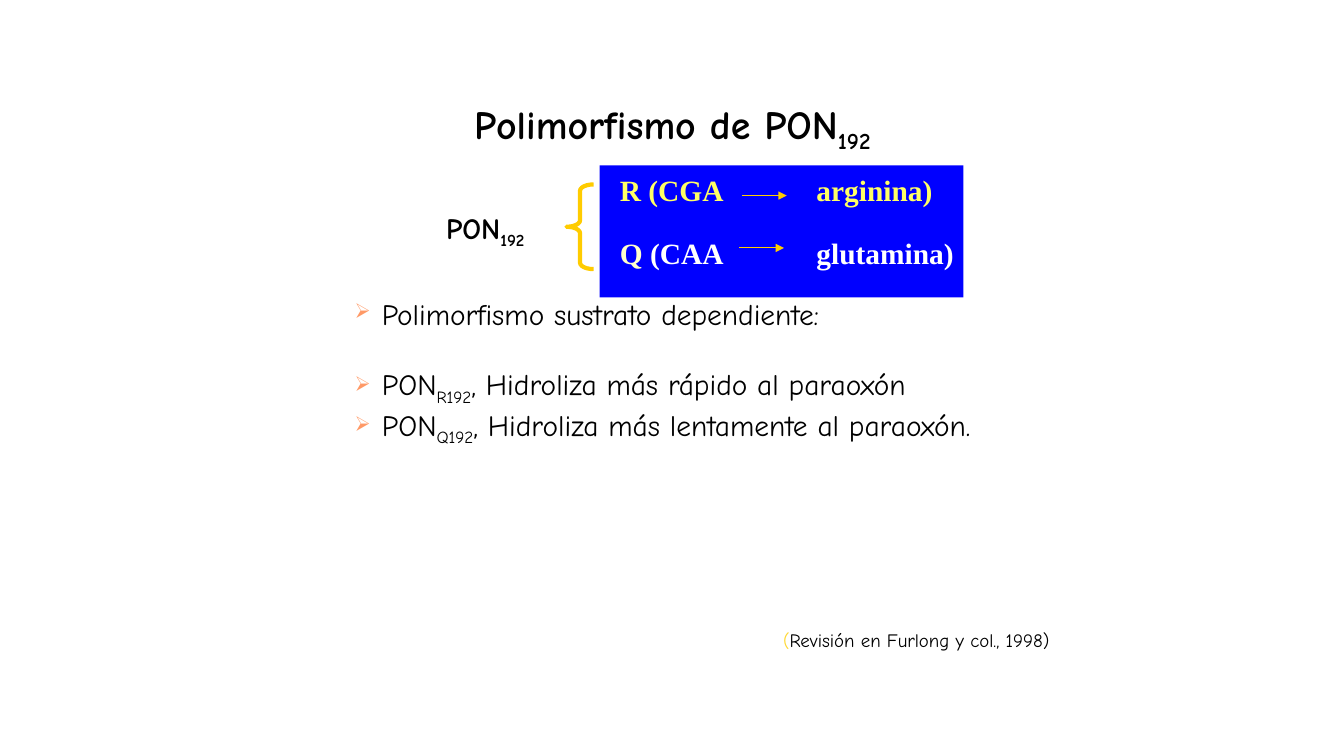
from lxml import etree
from pptx import Presentation, util as u
from pptx.dml.color import RGBColor
from pptx.enum import shapes, text
from pptx.oxml import ns

COLOURS = {"ink": "000000", "panel": "0000FF", "gold": "FFCC00", "yellow": "FFFF66",
           "cream": "FFFFCC", "white": "FFFFFF", "paren": "FFD935", "bullet": "FF9966"}
BODY, SERIF = "Comic Neue", "Times New Roman"

deck = Presentation()
deck.slide_width, deck.slide_height = u.Inches(13.33), u.Inches(7.5)
slide = deck.slides.add_slide(deck.slide_layouts[6])
COL, ROW = deck.slide_width / 100, deck.slide_height / 100


def area(left, top, width, height):
    """Turn columns and rows of a 100 by 100 grid into slide lengths."""
    return int(left * COL), int(top * ROW), int(width * COL), int(height * ROW)


def write(paragraph, content, size=21, font=BODY, colour="ink", bold=False, sub=False):
    run = paragraph.add_run()
    run.text = content
    run.font.size, run.font.name, run.font.bold = u.Pt(size), font, bold
    run.font.color.rgb = RGBColor.from_string(COLOURS[colour])
    if sub:
        run.font._element.set("baseline", "-25000")


# Title and gene label
for place, label, size in [((32.25, 12.53, 35.55, 7.73), "Polimorfismo de PON", 28.5),
                           ((31.65, 27.07, 8.92, 6), "PON", 21)]:
    heading = slide.shapes.add_textbox(*area(*place)).text_frame
    heading.word_wrap = False
    line = heading.paragraphs[0]
    line.alignment = text.PP_ALIGN.CENTER
    write(line, label, size, bold=True)
    write(line, "192", size, bold=True, sub=True)

# Findings
findings = slide.shapes.add_textbox(*area(25.65, 38.53, 49.8, 24.93)).text_frame
findings.word_wrap = True
for i, (start, variant, rest, gap) in enumerate([
        ("Polimorfismo sustrato dependiente:", "", "", 0),
        ("PON", "R192", ", Hidroliza más rápido al paraoxón", 25),
        ("PON", "Q192", ", Hidroliza más lentamente al paraoxón.", 0)]):
    line = findings.add_paragraph() if i else findings.paragraphs[0]
    line.alignment = text.PP_ALIGN.JUSTIFY
    line.space_before = u.Pt(gap)
    write(line, start)
    if variant:
        write(line, variant, sub=True)
        write(line, rest)
    props = line._p.get_or_add_pPr()
    props.set("marL", str(u.Inches(0.27)))
    props.set("indent", str(-u.Inches(0.27)))
    bullet_colour = etree.SubElement(props, ns.qn("a:buClr"))
    etree.SubElement(bullet_colour, ns.qn("a:srgbClr"), val=COLOURS["bullet"])
    etree.SubElement(props, ns.qn("a:buSzPct"), val="70000")
    etree.SubElement(props, ns.qn("a:buChar"), char="➢")

# Alleles
brace = slide.shapes.add_shape(shapes.MSO_SHAPE.LEFT_BRACE, *area(42.15, 24.4, 2.02, 11.2))
brace.shadow.inherit = False
brace.adjustments[0] = 0.234
brace.fill.background()
brace.line.color.rgb = RGBColor.from_string(COLOURS["gold"])
brace.line.width = u.Pt(3)

panel = slide.shapes.add_shape(shapes.MSO_SHAPE.RECTANGLE, *area(44.62, 21.87, 27.07, 17.47))
panel.shadow.inherit = False
panel.fill.solid()
panel.fill.fore_color.rgb = RGBColor.from_string(COLOURS["panel"])
panel.line.fill.background()
alleles = panel.text_frame
alleles.vertical_anchor = text.MSO_ANCHOR.TOP
alleles.margin_left, alleles.margin_right = u.Inches(0.2), 0
alleles.margin_top = u.Inches(0.07)
for i, (allele, codon, residue, allele_colour, colour, gap) in enumerate([
        ("R ", "(CGA", "arginina)", "yellow", "yellow", 0),
        ("Q ", "(CAA", "glutamina)", "cream", "white", 19.5)]):
    line = alleles.add_paragraph() if i else alleles.paragraphs[0]
    line.alignment = text.PP_ALIGN.LEFT
    line.space_before = u.Pt(gap)
    write(line, allele, font=SERIF, colour=allele_colour, bold=True)
    write(line, f"{codon}\t{residue}", font=SERIF, colour=colour, bold=True)
    tabs = etree.SubElement(line._p.get_or_add_pPr(), ns.qn("a:tabLst"))
    etree.SubElement(tabs, ns.qn("a:tab"), pos=str(u.Inches(1.95)), algn="l")

for left, top in [(55.2, 25.87), (55, 32.8)]:
    x, y, length, _ = area(left, top, 3.33, 0)
    arrow = slide.shapes.add_connector(shapes.MSO_CONNECTOR.STRAIGHT, x, y, x + length, y)
    arrow.line.color.rgb = RGBColor.from_string(COLOURS["gold"])
    arrow.line.width = u.Pt(0.75)
    etree.SubElement(arrow.line._get_or_add_ln(), ns.qn("a:tailEnd"), type="triangle")
    etree.SubElement(arrow._element.spPr, ns.qn("a:effectLst"))

# Citation
citation = slide.shapes.add_textbox(*area(56.62, 82.53, 23.1, 4.4)).text_frame
citation.word_wrap = False
line = citation.paragraphs[0]
line.alignment = text.PP_ALIGN.CENTER
write(line, "(", 13.5, colour="paren")
write(line, "Revisión en Furlong y col., 1998)", 13.5)

deck.save("out.pptx")
